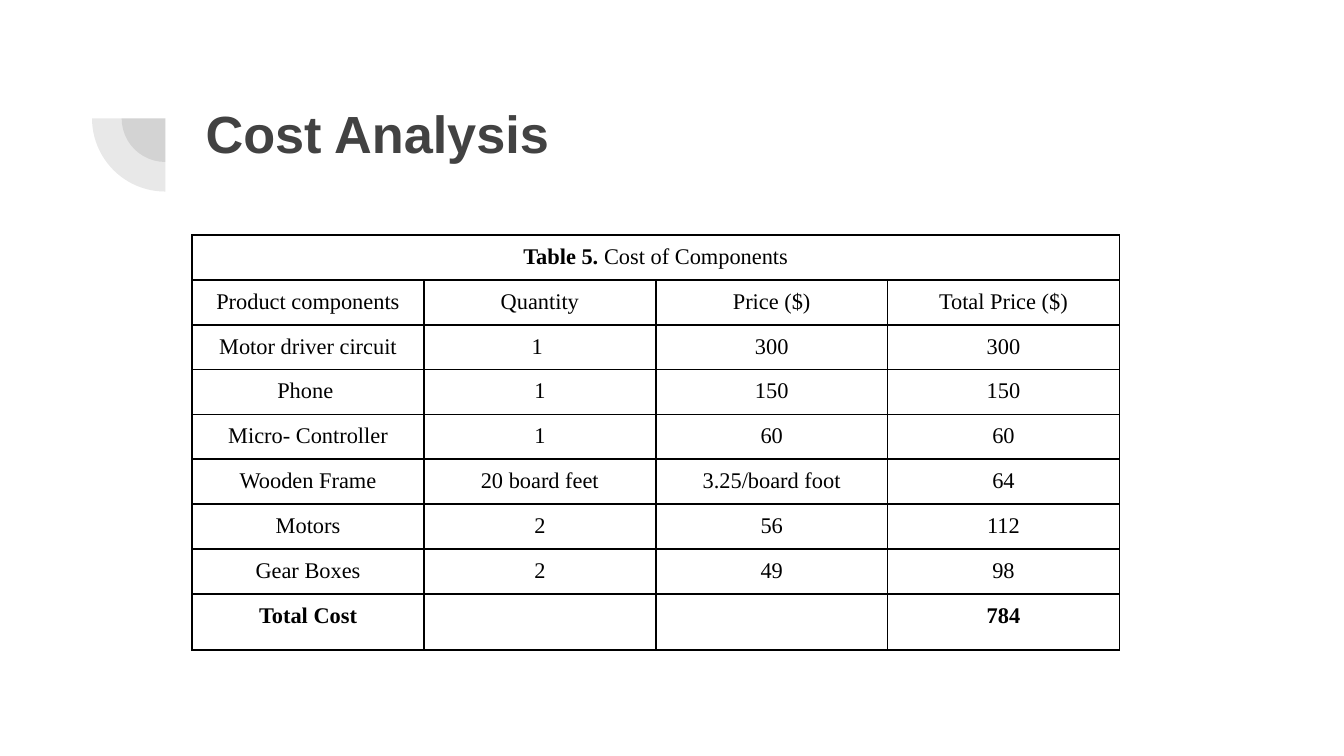
from lxml import etree
from pptx import Presentation
from pptx.dml.color import RGBColor
from pptx.enum.shapes import MSO_SHAPE
from pptx.enum.text import MSO_ANCHOR, MSO_AUTO_SIZE, PP_ALIGN
from pptx.oxml.ns import qn
from pptx.util import Inches, Pt

PIE = MSO_SHAPE.PIE
TOP = MSO_ANCHOR.TOP
NO_AUTO_SIZE = MSO_AUTO_SIZE.NONE
LEFT, CENTER = PP_ALIGN.LEFT, PP_ALIGN.CENTER

COLORS = {"heading": "424242", "ink": "000000"}
TITLE_ONLY_LAYOUT = 5
CAPTION = (("Table 5. ", True), ("Cost of Components", False))
COST_ROWS = [
    ("Product components", "Quantity", "Price ($)", "Total Price ($)"),
    ("Motor driver circuit", "1 ", "300", "300"),
    ("Phone ", "1", "150", "150"),
    ("Micro- Controller", "1", "60", "60"),
    ("Wooden Frame", "20 board feet", "3.25/board foot", "64"),
    ("Motors", "2", "56", "112"),
    ("Gear Boxes", "2", "49", "98"),
    ("Total Cost", "", "", "784"),
]


def color(name):
    return RGBColor.from_string(COLORS[name])


def set_margins(target, margin):
    target.margin_left = target.margin_right = margin
    target.margin_top = target.margin_bottom = margin


def style_font(font, name, size, color_name):
    font.name = name
    font.size = Pt(size)
    font.color.rgb = color(color_name)


def add_quarter_rings(slide, center_x, center_y):
    """Two translucent quarter discs sharing one corner."""
    for diameter in (Inches(0.65), Inches(1.09)):
        disc = slide.shapes.add_shape(
            PIE, center_x - diameter // 2, center_y - diameter // 2, diameter, diameter)
        disc.adjustments[0], disc.adjustments[1] = 108, 162
        disc.rotation = 270
        disc.shadow.inherit = False
        disc.line.fill.background()
        disc.fill.solid()
        disc.fill.fore_color.rgb = color("heading")
        fill_color = disc.fill._xPr.find(qn("a:solidFill"))[0]
        etree.SubElement(fill_color, qn("a:alpha"), val="12000")


def add_title(slide, left, top, width, height):
    title = slide.shapes.title
    title.left, title.top, title.width, title.height = left, top, width, height
    frame = title.text_frame
    frame.text = "Cost Analysis"
    frame.word_wrap = True
    frame.auto_size = NO_AUTO_SIZE
    frame.vertical_anchor = TOP
    set_margins(frame, Inches(0.1))
    paragraph = frame.paragraphs[0]
    paragraph.alignment = LEFT
    paragraph.line_spacing = 1.0
    style_font(paragraph.font, "Arial", 28, "heading")
    paragraph.font.bold = True


def add_borders(cell):
    properties = cell._tc.get_or_add_tcPr()
    for position, side in enumerate(("a:lnL", "a:lnR", "a:lnT", "a:lnB")):
        line = etree.Element(qn(side), w=str(Pt(1)))
        fill = etree.SubElement(line, qn("a:solidFill"))
        etree.SubElement(fill, qn("a:srgbClr"), val=COLORS["ink"])
        properties.insert(position, line)


def format_cell(cell):
    cell.fill.background()
    cell.vertical_anchor = TOP
    set_margins(cell, Inches(0.07))
    paragraph = cell.text_frame.paragraphs[0]
    paragraph.alignment = CENTER
    style_font(paragraph.font, "Times New Roman", 12, "ink")
    add_borders(cell)


def add_cost_table(slide, left, top, width, height):
    row_count, column_count = len(COST_ROWS) + 1, len(COST_ROWS[0])
    table = slide.shapes.add_table(
        row_count, column_count, left, top, width, height).table
    table.first_row = table.horz_banding = False

    # Equal columns and rows, with a taller total row
    total_height = Inches(0.42)
    for column in table.columns:
        column.width = width // column_count
    for row in table.rows:
        row.height = (height - total_height) // (row_count - 1)
    table.rows[row_count - 1].height = total_height

    # Caption across the full width
    table.cell(0, 0).merge(table.cell(0, column_count - 1))
    caption = table.cell(0, 0).text_frame.paragraphs[0]
    for text, bold in CAPTION:
        run = caption.add_run()
        run.text = text
        run.font.bold = bold

    # Header, components and total
    for row_index, values in enumerate(COST_ROWS, start=1):
        for column_index, value in enumerate(values):
            cell = table.cell(row_index, column_index)
            cell.text = value
            if row_index == row_count - 1:
                cell.text_frame.paragraphs[0].font.bold = True

    for cell in table.iter_cells():
        format_cell(cell)


def main():
    presentation = Presentation()
    presentation.slide_width = Inches(10)
    presentation.slide_height = presentation.slide_width * 9 // 16
    slide = presentation.slides.add_slide(presentation.slide_layouts[TITLE_ONLY_LAYOUT])
    add_quarter_rings(slide, Inches(1.23), Inches(0.88))
    add_title(slide, Inches(1.43), Inches(0.65), Inches(7.69), Inches(1.09))
    add_cost_table(slide, Inches(1.43), Inches(1.75), Inches(6.9), Inches(3.09))
    presentation.save("out.pptx")


if __name__ == "__main__":
    main()
